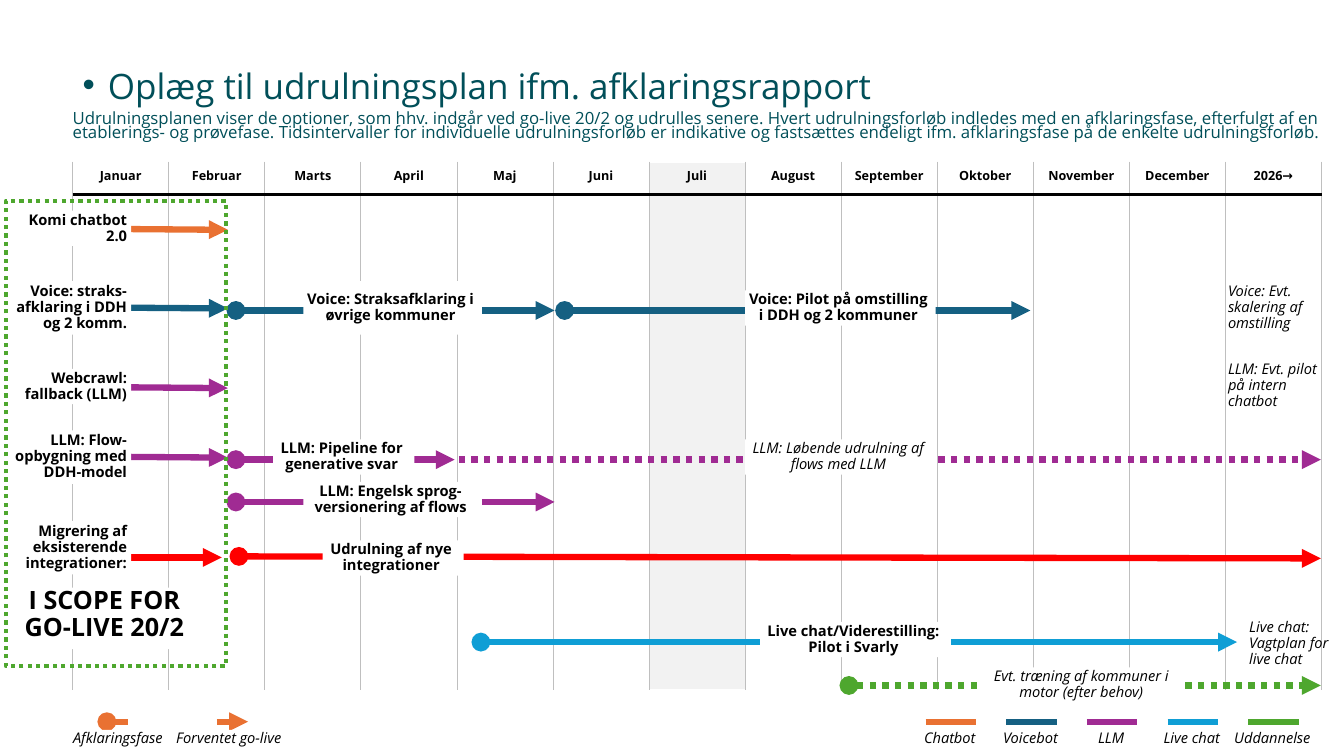
from lxml import etree
from pptx import Presentation
from pptx.dml.color import RGBColor
from pptx.enum.dml import MSO_LINE
from pptx.enum.shapes import MSO_CONNECTOR, MSO_SHAPE
from pptx.enum.text import MSO_ANCHOR, PP_ALIGN
from pptx.oxml.ns import qn
from pptx.util import Inches, Pt

BLACK = RGBColor(0x00, 0x00, 0x00)
WHITE = RGBColor(0xFF, 0xFF, 0xFF)
TEAL = RGBColor(0x01, 0x4F, 0x59)
SHADE = RGBColor(0xF2, 0xF2, 0xF2)
GRID = RGBColor(0xBF, 0xBF, 0xBF)
ORANGE = RGBColor(0xE9, 0x71, 0x32)
BLUE = RGBColor(0x15, 0x60, 0x82)
PURPLE = RGBColor(0xA0, 0x2B, 0x93)
CYAN = RGBColor(0x0F, 0x9E, 0xD5)
GREEN = RGBColor(0x4E, 0xA7, 0x2E)
RED = RGBColor(0xFF, 0x00, 0x00)
LEFT, CENTER, RIGHT = PP_ALIGN.LEFT, PP_ALIGN.CENTER, PP_ALIGN.RIGHT
TOP, MIDDLE = MSO_ANCHOR.TOP, MSO_ANCHOR.MIDDLE
DOTTED = MSO_LINE.ROUND_DOT
STRAIGHT = MSO_CONNECTOR.STRAIGHT
RECT = MSO_SHAPE.RECTANGLE
LABEL_INSETS = (0, 0, 0.04, 0)

MONTHS = ["Januar", "Februar", "Marts", "April", "Maj", "Juni", "Juli", "August",
          "September", "Oktober", "November", "December", "2026→"]
GO_LIVE = [
    (ORANGE, 0.94, 2.27, 2.26, 2.28, 2.09, 0.35, "Komi chatbot 2.0"),
    (BLUE, 0.94, 3.05, 2.26, 3.06, 2.79, 0.53, "Voice: straks-afklaring i DDH og 2 komm."),
    (PURPLE, 0.94, 3.84, 2.26, 3.85, 3.66, 0.35, "Webcrawl: fallback (LLM)"),
    (PURPLE, 0.94, 4.53, 2.26, 4.54, 4.27, 0.53, "LLM: Flow-opbygning med DDH-model"),
    (RED, 0.83, 5.53, 2.2, 5.53, 5.17, 0.53, "Migrering af eksisterende integrationer:"),
]
LATER = [
    (BLUE, 2.34, 3.08, 5.5, 3.08, (3.01, 2.79, 1.77, 0.53), "Voice: Straksafklaring i øvrige kommuner"),
    (BLUE, 5.6, 3.08, 10.22, 3.08, (7.39, 2.88, 1.89, 0.35), "Voice: Pilot på omstilling i DDH og 2 kommuner"),
    (PURPLE, 2.34, 4.56, 4.51, 4.56, (2.71, 4.36, 1.4, 0.35), "LLM: Pipeline for generative svar"),
    (PURPLE, 2.34, 4.98, 5.5, 4.98, (3.01, 4.78, 1.77, 0.35), "LLM: Engelsk sprog-versionering af flows"),
    (CYAN, 4.77, 6.37, 12.27, 6.37, (7.54, 6.17, 1.89, 0.35), "Live chat/Viderestilling: Pilot i Svarly"),
    (RED, 2.37, 5.52, 13.1, 5.54, (3.2, 5.36, 1.4, 0.35), "Udrulning af nye integrationer"),
]
OPTIONAL = [
    (GREEN, 8.42, 6.8, "oval", (9.75, 6.62, 1.99, 0.35), "Evt. træning af kommuner i motor (efter behov)"),
    (PURPLE, 4.55, 4.56, None, (7.39, 4.36, 1.89, 0.35), "LLM: Løbende udrulning af flows med LLM"),
]
NOTES = [
    (12.18, 2.79, 0.87, "Voice: Evt. skalering af omstilling"),
    (12.18, 3.56, 0.92, "LLM: Evt. pilot på intern chatbot"),
    (12.39, 6.12, 0.92, "Live chat: Vagtplan for live chat"),
]
LEGEND = [("Chatbot", ORANGE), ("Voicebot", BLUE), ("LLM", PURPLE),
          ("Live chat", CYAN), ("Uddannelse", GREEN)]


class Plan:
    """Draws the elements of the rollout plan in one style."""

    font = "Open Sans"

    def __init__(self, prs):
        self.s = prs.slides.add_slide(prs.slide_layouts[5])

    def put_text(self, tf, text, size=10.5, color=BLACK, bold=False, italic=False,
                 align=LEFT, spacing=0.9):
        p = tf.paragraphs[0]
        p.alignment, p.line_spacing, p.space_before = align, spacing, Pt(0)
        r = p.add_run()
        r.text = text
        r.font.name, r.font.size = self.font, Pt(size)
        r.font.bold, r.font.italic = bold, italic
        r.font.color.rgb = color
        return p

    def frame(self, tf, insets, anchor):
        tf.word_wrap, tf.vertical_anchor = True, anchor
        tf.margin_left, tf.margin_top, tf.margin_right, tf.margin_bottom = map(Inches, insets)

    def title(self, box, text):
        sp = self.s.shapes.title
        sp.left, sp.top, sp.width, sp.height = map(Inches, box)
        self.frame(sp.text_frame, (0.1, 0.05, 0.1, 0.05), TOP)
        p = self.put_text(sp.text_frame, text, size=25, color=TEAL, spacing=0.7)
        pPr = p._p.get_or_add_pPr()
        pPr.set("marL", str(Inches(0.25)))
        pPr.set("indent", str(Inches(-0.25)))
        etree.SubElement(pPr, qn("a:buFont")).set("typeface", "Arial")
        etree.SubElement(pPr, qn("a:buChar")).set("char", "•")

    def text(self, box, text, insets=LABEL_INSETS, anchor=MIDDLE, **style):
        sp = self.s.shapes.add_textbox(*map(Inches, box))
        self.frame(sp.text_frame, insets, anchor)
        self.put_text(sp.text_frame, text, **style)

    def label(self, box, text, anchor=MIDDLE, **style):
        sp = self.s.shapes.add_shape(RECT, *map(Inches, box))
        sp.shadow.inherit = False
        sp.fill.solid()
        sp.fill.fore_color.rgb = WHITE
        sp.line.fill.background()
        self.frame(sp.text_frame, LABEL_INSETS, anchor)
        self.put_text(sp.text_frame, text, **style)

    def outline(self, box, color, width):
        sp = self.s.shapes.add_shape(RECT, *map(Inches, box))
        sp.shadow.inherit = False
        sp.fill.background()
        sp.line.color.rgb, sp.line.width = color, Pt(width)
        sp.line.dash_style = DOTTED

    def line(self, x1, y1, x2, y2, color, width=4.5, head=None, tail=None, dash=None):
        c = self.s.shapes.add_connector(STRAIGHT, *map(Inches, (x1, y1, x2, y2)))
        c.line.color.rgb, c.line.width = color, Pt(width)
        if dash:
            c.line.dash_style = dash
        spPr = c._element.spPr
        for tag, kind in (("a:headEnd", head), ("a:tailEnd", tail)):
            if kind:
                etree.SubElement(spPr.find(qn("a:ln")), qn(tag)).set("type", kind)
        etree.SubElement(spPr, qn("a:effectLst"))

    def calendar(self, box, months, shaded):
        table = self.s.shapes.add_table(1, len(months), *map(Inches, box)).table
        table.first_row = table.horz_banding = False
        for cell, month in zip(table.rows[0].cells, months):
            self.put_text(cell.text_frame, month, size=9, bold=True, align=CENTER, spacing=1.0)
            tcPr = cell._tc.get_or_add_tcPr()
            for side in ("a:lnL", "a:lnR"):
                ln = etree.SubElement(tcPr, qn(side), w=str(Pt(0.5)))
                fill = etree.SubElement(ln, qn("a:solidFill"))
                etree.SubElement(fill, qn("a:srgbClr"), val=str(GRID))
            if month == shaded:
                cell.fill.solid()
                cell.fill.fore_color.rgb = SHADE
            else:
                cell.fill.background()


def main():
    prs = Presentation()
    prs.slide_width, prs.slide_height = Inches(13.33), Inches(7.5)
    plan = Plan(prs)
    plan.title((0.72, 0.7, 11.91, 0.43), "Oplæg til udrulningsplan ifm. afklaringsrapport")
    plan.calendar((0.72, 1.61, 12.39, 5.23), MONTHS, "Juli")
    plan.line(0.72, 1.93, 13.11, 1.93, BLACK, width=2.5)
    plan.text((0.72, 1.12, 12.39, 0.43),
              "Udrulningsplanen viser de optioner, som hhv. indgår ved go-live 20/2 og udrulles "
              "senere. Hvert udrulningsforløb indledes med en afklaringsfase, efterfulgt af en "
              "etablerings- og prøvefase. Tidsintervaller for individuelle udrulningsforløb er "
              "indikative og fastsættes endeligt ifm. afklaringsfase på de enkelte udrulningsforløb.",
              insets=(0, 0, 0, 0), anchor=TOP, size=12, color=TEAL, spacing=0.7)

    plan.label((0.23, 5.83, 1.65, 0.61), "I SCOPE FOR GO-LIVE 20/2", anchor=TOP,
               size=18, bold=True, align=CENTER)
    for color, x1, y1, x2, y2, top, height, text in GO_LIVE:
        plan.line(x1, y1, x2, y2, color, head="oval", tail="triangle")
        plan.label((0.09, top, 1.21, height), text, bold=True, align=RIGHT)
    for color, x, y, head, box, text in OPTIONAL:
        plan.line(x, y, 13.1, y, color, head=head, tail="triangle", dash=DOTTED)
        plan.label(box, text, italic=True, align=CENTER)
    for color, x1, y1, x2, y2, box, text in LATER:
        plan.line(x1, y1, x2, y2, color, head="oval", tail="triangle")
        plan.label(box, text, bold=True, align=CENTER)
    for x, y, width, text in NOTES:
        plan.text((x, y, width, 0.53), text, insets=(0, 0, 0, 0), italic=True)
    plan.outline((0.06, 1.99, 2.18, 4.62), GREEN, 3)

    plan.line(1.06, 7.16, 1.27, 7.16, ORANGE, head="oval")
    plan.line(2.15, 7.16, 2.46, 7.16, ORANGE, tail="triangle")
    plan.label((0.72, 7.24, 0.94, 0.18), "Afklaringsfase", italic=True, align=CENTER)
    plan.label((1.71, 7.24, 1.16, 0.18), "Forventet go-live", italic=True, align=CENTER)
    for i, (text, color) in enumerate(LEGEND):
        x = 8.99 + 0.8 * i
        plan.text((x, 7.24, 0.9, 0.18), text, italic=True, align=CENTER)
        plan.line(x + 0.19, 7.16, x + 0.69, 7.16, color)
    prs.save("out.pptx")


if __name__ == "__main__":
    main()
